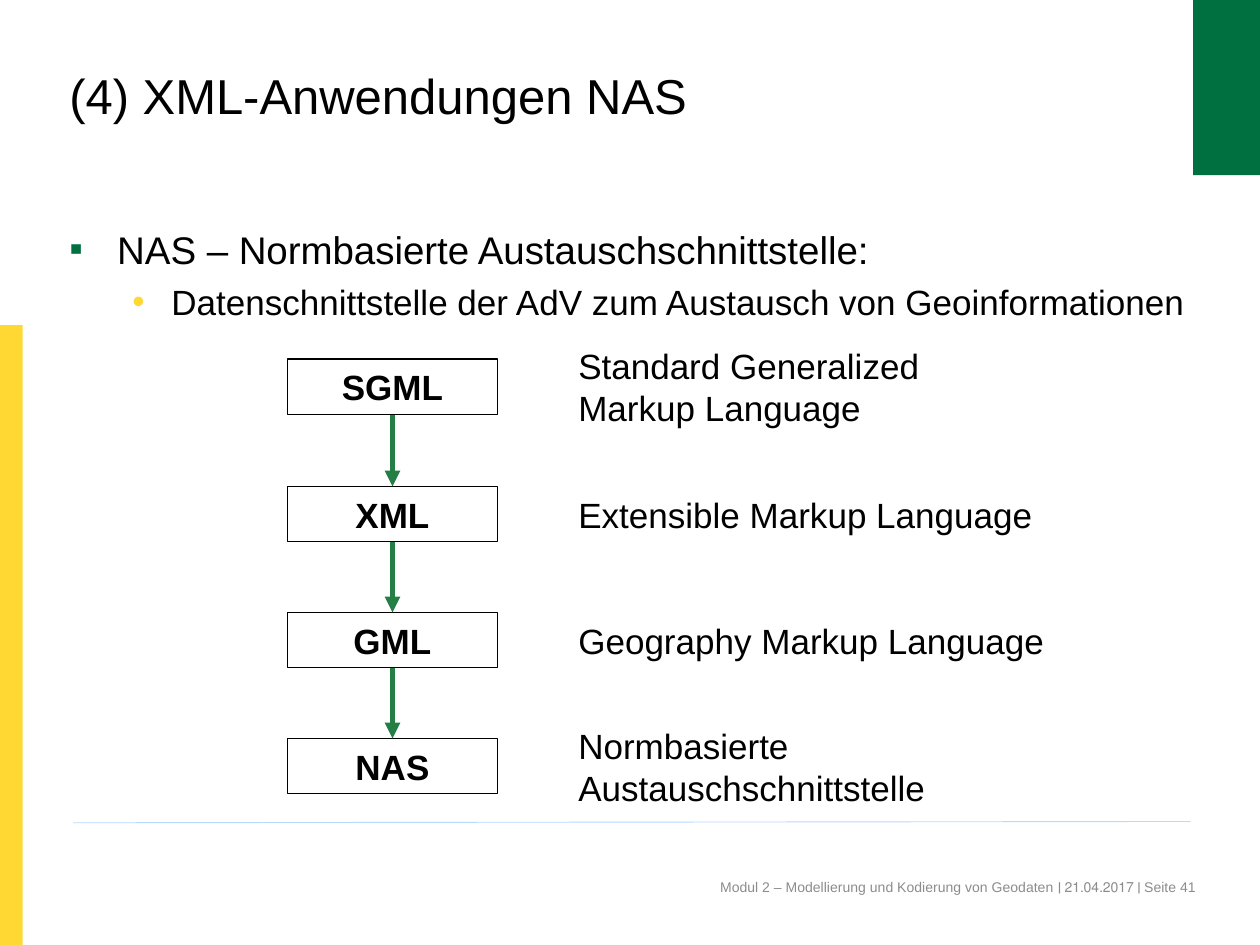
from dataclasses import dataclass

from lxml import etree
from pptx import Presentation
from pptx.dml.color import RGBColor
from pptx.enum.shapes import MSO_CONNECTOR, MSO_SHAPE
from pptx.enum.text import MSO_ANCHOR, PP_ALIGN
from pptx.oxml.ns import qn
from pptx.util import Inches, Pt

RECTANGLE = MSO_SHAPE.RECTANGLE
STRAIGHT = MSO_CONNECTOR.STRAIGHT
TOP, MIDDLE = MSO_ANCHOR.TOP, MSO_ANCHOR.MIDDLE
LEFT, CENTER, RIGHT = PP_ALIGN.LEFT, PP_ALIGN.CENTER, PP_ALIGN.RIGHT

BLACK = RGBColor(0, 0, 0)
GRAY = RGBColor(0x8C, 0x8C, 0x8C)
GREEN = RGBColor(0x00, 0x70, 0x40)
ARROW_GREEN = RGBColor(0x23, 0x7F, 0x44)
YELLOW = RGBColor(0xFF, 0xD8, 0x33)
PALE_BLUE = RGBColor(0xB7, 0xDA, 0xFD)

FONT = "Arial"
BOX_LEFT, BOX_WIDTH, BOX_HEIGHT = 2.28, 1.67, 0.44
LABEL_LEFT = 4.51


@dataclass(frozen=True)
class Stage:
    name: str
    meaning: str
    top: float
    label_width: float
    label_height: float = BOX_HEIGHT


@dataclass(frozen=True)
class Bullet:
    text: str
    symbol: str
    color: RGBColor
    size: int
    indent: float
    hanging: float
    level: int
    space_before: int


STAGES = [
    Stage("SGML", "Standard Generalized Markup Language", 2.85, 3.06, 0.73),
    Stage("XML", "Extensible Markup Language", 3.86, 3.82),
    Stage("GML", "Geography Markup Language", 4.86, 3.89),
    Stage("NAS", "Normbasierte Austauschschnittstelle", 5.86, 3.06, 0.69),
]
BULLETS = [
    Bullet("NAS – Normbasierte Austauschschnittstelle:", "▪", GREEN, 22, 0.38, 0.38, 0, 0),
    Bullet("Datenschnittstelle der AdV zum Austausch von Geoinformationen",
           "•", YELLOW, 20, 0.81, 0.31, 1, 5),
]


def prepare_frame(shape, anchor=TOP, margin_x: float = 0, margin_y: float = 0):
    frame = shape.text_frame
    frame.word_wrap = True
    frame.vertical_anchor = anchor
    frame.margin_left = frame.margin_right = Inches(margin_x)
    frame.margin_top = frame.margin_bottom = Inches(margin_y)
    return frame


def add_run(paragraph, text: str, size: int, color: RGBColor = BLACK, bold: bool = False) -> None:
    run = paragraph.add_run()
    run.text = text
    run.font.name = FONT
    run.font.size = Pt(size)
    run.font.bold = bold
    run.font.color.rgb = color


def add_text_box(slide, left: float, top: float, width: float, height: float,
                 anchor=TOP, margin_x: float = 0, margin_y: float = 0):
    box = slide.shapes.add_textbox(Inches(left), Inches(top), Inches(width), Inches(height))
    return prepare_frame(box, anchor, margin_x, margin_y)


def add_rectangle(slide, left: float, top: float, width: float, height: float):
    shape = slide.shapes.add_shape(
        RECTANGLE, Inches(left), Inches(top), Inches(width), Inches(height))
    shape.shadow.inherit = False
    return shape


def add_color_bar(slide, left: float, top: float, width: float, height: float,
                  color: RGBColor) -> None:
    bar = add_rectangle(slide, left, top, width, height)
    bar.fill.solid()
    bar.fill.fore_color.rgb = color
    bar.line.fill.background()


def add_line(slide, start: tuple[float, float], end: tuple[float, float],
             color: RGBColor, width: float):
    line = slide.shapes.add_connector(
        STRAIGHT, *(Inches(value) for value in (*start, *end)))
    line.line.color.rgb = color
    line.line.width = Pt(width)
    etree.SubElement(line._element.spPr, qn("a:effectLst"))
    return line


def add_arrow(slide, upper_box, lower_box) -> None:
    arrow = add_line(slide, (0, 0), (1, 1), ARROW_GREEN, 3)
    arrow.begin_connect(upper_box, 2)
    arrow.end_connect(lower_box, 0)
    etree.SubElement(arrow.line._get_or_add_ln(), qn("a:tailEnd"), type="triangle")


def add_bullet(paragraph, bullet: Bullet) -> None:
    properties = paragraph._p.get_or_add_pPr()
    properties.set("marL", str(Inches(bullet.indent)))
    properties.set("indent", str(-Inches(bullet.hanging)))
    bullet_color = etree.SubElement(properties, qn("a:buClr"))
    etree.SubElement(bullet_color, qn("a:srgbClr"), val=str(bullet.color))
    etree.SubElement(properties, qn("a:buFont"), typeface=FONT)
    etree.SubElement(properties, qn("a:buChar"), char=bullet.symbol)
    paragraph.level = bullet.level
    paragraph.space_before = Pt(bullet.space_before)
    add_run(paragraph, bullet.text, bullet.size)


def add_stage(slide, stage: Stage):
    box = add_rectangle(slide, BOX_LEFT, stage.top, BOX_WIDTH, BOX_HEIGHT)
    box.fill.background()
    box.line.color.rgb = BLACK
    box.line.width = Pt(0.75)
    name = prepare_frame(box, MIDDLE, 0.08, 0.04).paragraphs[0]
    name.alignment = CENTER
    add_run(name, stage.name, 20, bold=True)

    label_top = stage.top + (BOX_HEIGHT - stage.label_height) / 2
    label = add_text_box(slide, LABEL_LEFT, label_top, stage.label_width,
                         stage.label_height, MIDDLE, 0.08, 0.04).paragraphs[0]
    label.alignment = LEFT
    add_run(label, stage.meaning, 20)
    return box


def main() -> None:
    presentation = Presentation()
    presentation.slide_width = Inches(10)
    presentation.slide_height = Inches(7.5)
    slide = presentation.slides.add_slide(presentation.slide_layouts[6])

    add_color_bar(slide, 0, 2.58, 0.18, 4.92, YELLOW)
    add_color_bar(slide, 9.47, -0.02, 0.53, 1.41, GREEN)

    footer = add_text_box(slide, 5, 6.97, 4.49, 0.4).paragraphs[0]
    footer.alignment = RIGHT
    add_run(footer, "Modul 2 – Modellierung und Kodierung von Geodaten ׀ 21.04.2017 ׀ Seite 41",
            8, GRAY)
    add_line(slide, (0.58, 6.53), (9.45, 6.52), PALE_BLUE, 0.5)

    body = add_text_box(slide, 0.55, 1.79, 8.92, 4.63)
    for index, bullet in enumerate(BULLETS):
        add_bullet(body.add_paragraph() if index else body.paragraphs[0], bullet)

    title = add_text_box(slide, 0.55, 0.53, 5.6, 1.01).paragraphs[0]
    title.line_spacing = Pt(33)
    add_run(title, "(4) XML-Anwendungen NAS", 28)

    boxes = [add_stage(slide, stage) for stage in STAGES]
    for upper_box, lower_box in zip(boxes, boxes[1:]):
        add_arrow(slide, upper_box, lower_box)

    presentation.save("out.pptx")


if __name__ == "__main__":
    main()
